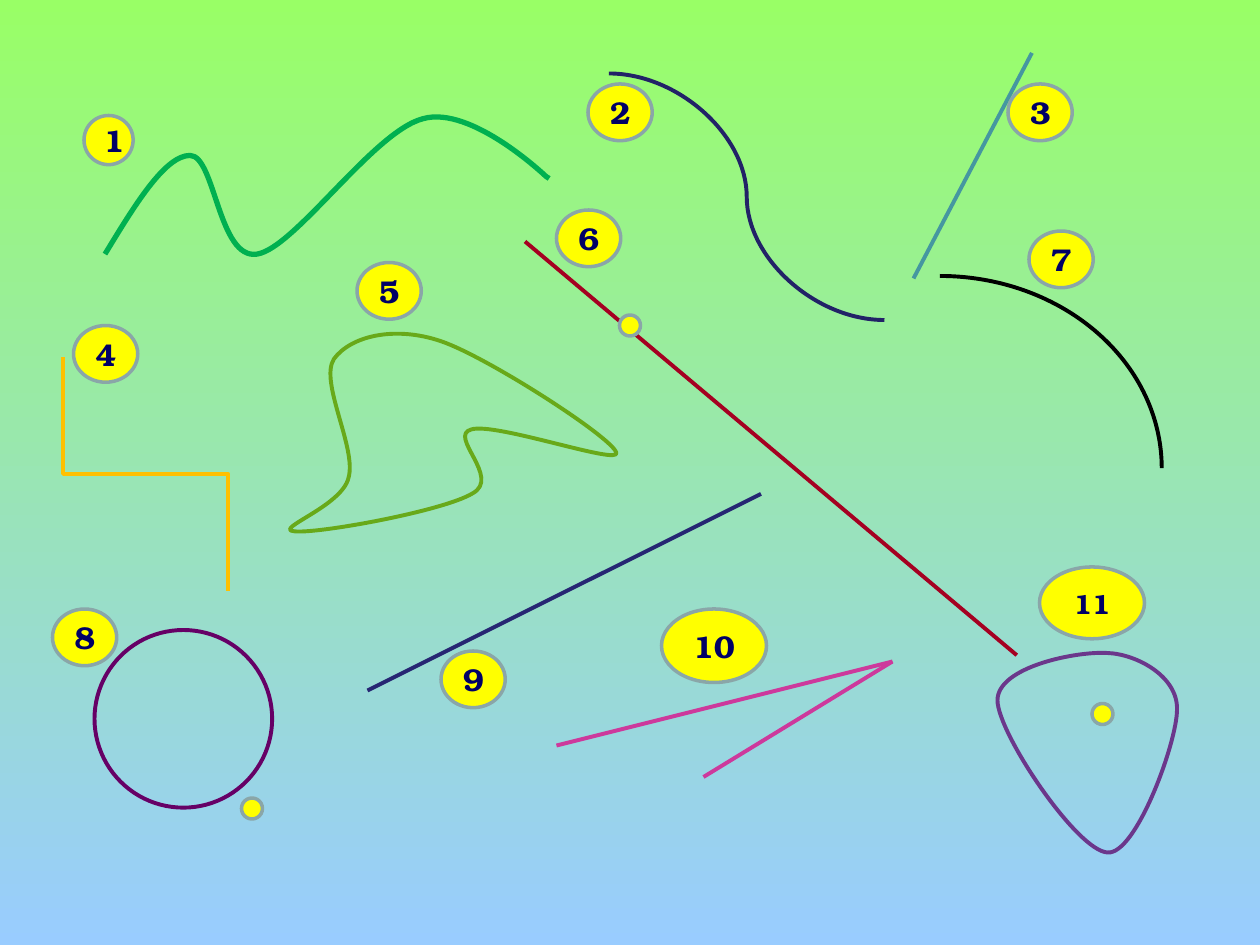
from lxml import etree
from pptx import Presentation
from pptx.dml.color import RGBColor
from pptx.enum import shapes, text
from pptx.oxml.ns import qn
from pptx import util as u

SKY_TOP = RGBColor(0x99, 0xFF, 0x66)
SKY_BOTTOM = RGBColor(0x99, 0xCC, 0xFF)
YELLOW = RGBColor(0xFF, 0xFF, 0x00)
RIM = RGBColor(0x8A, 0xA6, 0xA8)
INK = RGBColor(0x00, 0x00, 0x66)
RED = RGBColor(0xA5, 0x00, 0x21)
BLACK = RGBColor(0x00, 0x00, 0x00)
NAVY = RGBColor(0x22, 0x22, 0x67)
BLUE = RGBColor(0x26, 0x26, 0x73)
GREEN = RGBColor(0x00, 0xB0, 0x50)
TEAL = RGBColor(0x45, 0x97, 0xA0)
ORANGE = RGBColor(0xFF, 0xC0, 0x00)
PLUM = RGBColor(0x66, 0x00, 0x66)
OLIVE = RGBColor(0x68, 0xA9, 0x19)
VIOLET = RGBColor(0x6B, 0x37, 0x8B)
PINK = RGBColor(0xCD, 0x39, 0x9C)

COLUMNS, ROWS = 120, 90
FONT = "TeX Gyre Bonum"


def write(box, words, size=18, color=INK, bold=True):
    """Centre one formatted line of text in a shape."""
    frame = box.text_frame
    frame.vertical_anchor = text.MSO_ANCHOR.MIDDLE
    para = frame.paragraphs[0]
    para.alignment = text.PP_ALIGN.CENTER
    span = para.add_run()
    span.text = words
    span.font.name, span.font.size = FONT, u.Pt(size)
    span.font.bold, span.font.color.rgb = bold, color


class LineSheet:
    """Draws on one slide, with lengths in grid columns and rows."""

    def __init__(self, deck):
        self.page = deck.slides.add_slide(deck.slide_layouts[6])
        self.column = deck.slide_width / COLUMNS
        self.row = deck.slide_height / ROWS

    def place(self, x, y):
        return round(x * self.column), round(y * self.row)

    def background(self, top, bottom):
        fill = self.page.background.fill
        fill.gradient()
        fill.gradient_angle = 270
        for stop, color in zip(fill.gradient_stops, (top, bottom)):
            stop.color.rgb = color

    def outline(self, shape, color, width=2.25, fill=None):
        shape.shadow.inherit = False
        if fill is None:
            shape.fill.background()
        else:
            shape.fill.solid()
            shape.fill.fore_color.rgb = fill
        shape.line.color.rgb = color
        shape.line.width = u.Pt(width)

    def preset(self, kind, at, size, color, width=2.25, fill=None):
        shape = self.page.shapes.add_shape(kind, *self.place(*at), *self.place(*size))
        self.outline(shape, color, width, fill)
        return shape

    def badge(self, words, at, size=(6.12, 5.4), points=18):
        write(self.dot(at, size), words, size=points)

    def dot(self, at, size=(2, 2)):
        return self.preset(shapes.MSO_SHAPE.OVAL, at, size, RIM, 2, YELLOW)

    def line(self, start, end, color, kind=shapes.MSO_CONNECTOR.STRAIGHT, group=None):
        owner = group or self.page
        link = owner.shapes.add_connector(kind, *self.place(*start), *self.place(*end))
        link.line.color.rgb = color
        link.line.width = u.Pt(2.25)
        etree.SubElement(link.element.spPr, qn("a:effectLst"))
        return link

    def step(self, start, end, color):
        """Elbow that leaves downwards: a flipped one, turned a quarter left."""
        middle_x, middle_y = ((a + b) / 2 for a, b in zip(start, end))
        half_x, half_y = ((b - a) / 2 for a, b in zip(start, end))
        link = self.line((middle_x + half_y, middle_y - half_x),
                         (middle_x - half_y, middle_y + half_x),
                         color, shapes.MSO_CONNECTOR.ELBOW)
        link.element.spPr.find(qn("a:xfrm")).set("rot", str(270 * 60000))

    def curve(self, points, color, width=2.25, close=False):
        """Bezier outline: each three points after the first make one arc."""
        first, *rest = [self.place(*point) for point in points]
        builder = self.page.shapes.build_freeform(*first, scale=1.0)
        builder.add_line_segments(rest, close=close)
        shape = builder.convert_to_shape()
        path = next(shape.element.iter(qn("a:path")))
        legs = path.findall(qn("a:lnTo"))
        for i in range(0, len(legs) - 2, 3):
            legs[i].tag = qn("a:cubicBezTo")
            for leg in legs[i + 1:i + 3]:
                legs[i].append(leg[0])
                path.remove(leg)
        self.outline(shape, color, width)


WAVE = [(10, 24.2),
        (12.8, 19.6), (15.7, 14.8), (18.1, 14.8),
        (20.5, 14.8), (20.8, 24.8), (24.5, 24.2),
        (28.1, 23.6), (35.6, 12.5), (40.3, 11.3),
        (44.9, 10), (52, 16.8), (52, 16.8),
        (52.3, 17)]
BLOB = [(33.2, 45.5),
        (34, 42.7), (30.4, 36.4), (31.8, 34.2),
        (33.4, 32), (37.6, 31), (42, 32.5),
        (46.4, 34), (58.2, 41.6), (58.7, 43.1),
        (59.2, 44.4), (47.2, 40.2), (44.9, 40.9),
        (42.6, 41.5), (47.8, 45.5), (45, 47),
        (42.2, 48.7), (30, 50.9), (28, 50.6),
        (26, 50.4), (32.6, 48.2), (33.2, 45.5)]
SHIELD = [(105.5, 62.2),
          (102.6, 62), (95, 63.5), (95, 66.7),
          (95, 69.8), (102.6, 81.1), (105.5, 81.2),
          (108.2, 81.4), (112.1, 70.7), (112.1, 67.6),
          (112.2, 64.4), (108.2, 62.3), (105.5, 62.2)]
BADGES = {"3": (96, 8), "7": (98, 22), "2": (56, 8), "6": (53, 20),
          "5": (34, 25), "4": (7, 31), "8": (5, 58), "9": (42, 62)}


def main():
    deck = Presentation()
    deck.slide_width, deck.slide_height = u.Inches(10), u.Inches(7.5)
    sheet = LineSheet(deck)
    sheet.background(SKY_TOP, SKY_BOTTOM)

    # Lines and curves
    sheet.line((50, 23), (96.84, 62.4), RED)
    sheet.preset(shapes.MSO_SHAPE.ARC, (68.4, 26.28), (42.24, 36.6), BLACK)
    sheet.line((58, 7), (84.24, 30.48), NAVY, shapes.MSO_CONNECTOR.CURVE)
    sheet.line((35, 65.76), (72.48, 47.04), BLUE)
    sheet.curve(WAVE, GREEN, width=3)
    sheet.line((87, 26.52), (98.28, 5.04), TEAL)
    sheet.step((6, 34), (21.72, 56.28), ORANGE)
    sheet.preset(shapes.MSO_SHAPE.OVAL, (9, 60), (16.92, 16.92), PLUM)
    sheet.curve(BLOB, OLIVE, close=True)
    sheet.curve(SHIELD, VIOLET, close=True)

    # Numbered badges
    sheet.badge("1", (8, 11), (4.68, 4.68))
    sheet.badge("11", (99, 54), (10, 6.84), points=16)
    for number, at in BADGES.items():
        sheet.badge(number, at)
    sheet.badge("10", (63, 58), (10, 7))

    # Angle made of two lines
    angle = sheet.page.shapes.add_group_shape()
    for start in ((53, 71), (67, 74)):
        sheet.line(start, (85, 63), PINK, group=angle)

    # Points on, inside and outside the lines
    for at in ((59, 30), (104, 67), (23, 76)):
        sheet.dot(at)

    deck.save("out.pptx")


if __name__ == "__main__":
    main()
